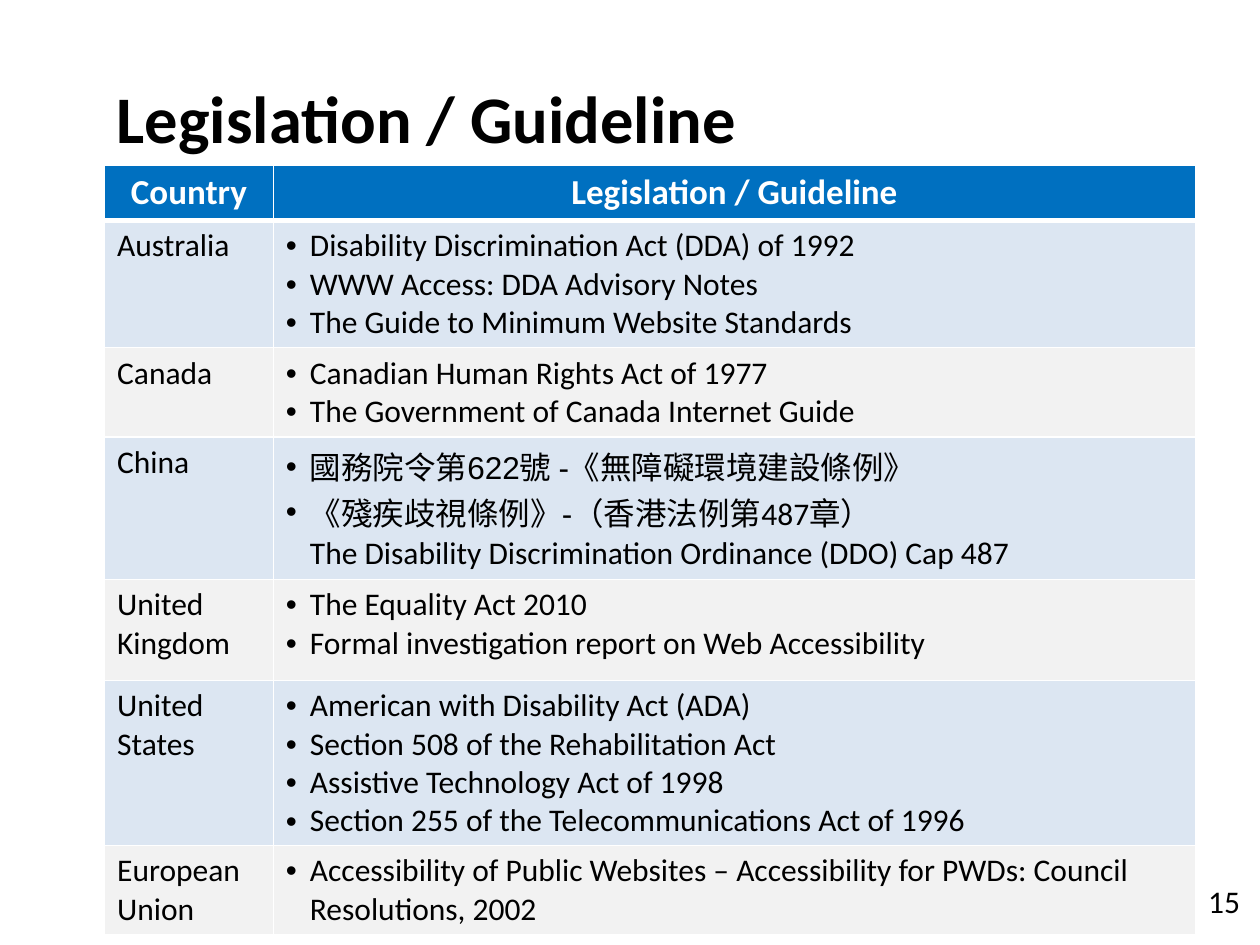
from dataclasses import dataclass
from lxml import etree
from pptx import Presentation, util as u
from pptx.dml.color import RGBColor
from pptx.enum import text
from pptx.oxml.ns import qn


@dataclass(frozen=True)
class Theme:
    font: str = "Calibri"
    alt: str = "Arial"
    ink: str = "000000"
    paper: str = "FFFFFF"
    head: str = "0070C0"
    bands: tuple = ("DCE6F2", "F2F2F2")
    title: int = 38
    label: int = 20
    body: int = 18
    thin: int = 1
    thick: int = 3
    hang: float = 0.19


T = Theme()
WIDE, HIGH = 10, 7.5
LEFT, SPAN = 0.83, 8.66
COLS = (1.34, 7.32)
HEAD = 0.44


# Each line is a list of (words, font) runs, with True for a bulleted line
def line(words, font=T.font, dot=True):
    return [(words, font)], dot


ROWS = [
    ("Australia", 1.01, [
        line("Disability Discrimination Act (DDA) of 1992"),
        line("WWW Access: DDA Advisory Notes"),
        line("The Guide to Minimum Website Standards")]),
    ("Canada", 0.71, [
        line("Canadian Human Rights Act of 1977"),
        line("The Government of Canada Internet Guide")]),
    ("China", 1.13, [
        line("國務院令第622號 -《無障礙環境建設條例》", T.alt),
        ([("《殘疾歧視條例》", T.font), ("-", T.alt),
          ("（香港法例第487章）", T.font)], True),
        line("The Disability Discrimination Ordinance (DDO) Cap 487", dot=False)]),
    ("United Kingdom", 0.8, [
        line("The Equality Act 2010"),
        line("Formal investigation report on Web Accessibility")]),
    ("United States", 1.31, [
        line("American with Disability Act (ADA)"),
        line("Section 508 of the Rehabilitation Act"),
        line("Assistive Technology Act of 1998"),
        line("Section 255 of the Telecommunications Act of 1996")]),
    ("European Union", 0.71, [
        line("Accessibility of Public Websites – Accessibility for PWDs: "
             "Council Resolutions, 2002")]),
]


def write(para, words, size, color=T.ink, bold=False, font=T.font):
    run = para.add_run()
    run.text = words
    form = {"name": font, "size": u.Pt(size), "bold": bold}
    for key, val in form.items():
        setattr(run.font, key, val)
    run.font.color.rgb = RGBColor.from_string(color)


def note(slide, box, words, size, bold=False, anchor=text.MSO_ANCHOR.TOP):
    frame = slide.shapes.add_textbox(*map(u.Inches, box)).text_frame
    frame.word_wrap = True
    frame.vertical_anchor = anchor
    write(frame.paragraphs[0], words, size, bold=bold)


def indent(para, dot):
    props = para._p.get_or_add_pPr()
    hang = u.Inches(T.hang)
    props.set("marL", str(hang))
    props.set("indent", str(-hang if dot else 0))
    if dot:
        etree.SubElement(props, qn("a:buFont"), typeface=T.alt)
        etree.SubElement(props, qn("a:buChar"), char="•")


def paint(cell, color, top=T.thin, base=T.thin):
    props = cell._tc.get_or_add_tcPr()
    edges = {"lnL": T.thin, "lnR": T.thin, "lnT": top, "lnB": base}
    for name, width in edges.items():
        edge = etree.SubElement(props, qn("a:" + name), w=str(u.Pt(width)))
        fill = etree.SubElement(edge, qn("a:solidFill"))
        etree.SubElement(fill, qn("a:srgbClr"), val=T.paper)
    cell.fill.solid()
    cell.fill.fore_color.rgb = RGBColor.from_string(color)


def fill_list(frame, lines):
    for i, (runs, dot) in enumerate(lines):
        para = frame.add_paragraph() if i else frame.paragraphs[0]
        indent(para, dot)
        for words, font in runs:
            write(para, words, T.body, font=font)


def laws(slide, box):
    table = slide.shapes.add_table(
        len(ROWS) + 1, len(COLS), *map(u.Inches, box)).table
    for col, width in zip(table.columns, COLS):
        col.width = u.Inches(width)

    # Header row
    table.rows[0].height = u.Inches(HEAD)
    for cell, words in zip(table.rows[0].cells, ("Country", "Legislation / Guideline")):
        para = cell.text_frame.paragraphs[0]
        para.alignment = text.PP_ALIGN.CENTER
        write(para, words, T.label, T.paper, True)
        paint(cell, T.head, base=T.thick)

    # Country rows in alternating bands
    for i, (land, height, lines) in enumerate(ROWS):
        row = table.rows[i + 1]
        row.height = u.Inches(height)
        name, acts = row.cells
        write(name.text_frame.paragraphs[0], land, T.body)
        fill_list(acts.text_frame, lines)
        for cell in (name, acts):
            paint(cell, T.bands[i % 2], top=T.thin if i else T.thick)


def main():
    deck = Presentation()
    deck.slide_width, deck.slide_height = u.Inches(WIDE), u.Inches(HIGH)
    slide = deck.slides.add_slide(deck.slide_layouts[6])
    # Title, table and page number
    note(slide, (LEFT, 0.3, SPAN, 1.25), "Legislation / Guideline",
         T.title, True, text.MSO_ANCHOR.MIDDLE)
    laws(slide, (LEFT, 1.31, SPAN, HEAD + sum(row[1] for row in ROWS)))
    note(slide, (LEFT + SPAN, 6.95, 0.56, 0.4), "15", T.body)
    deck.save("out.pptx")


if __name__ == "__main__":
    main()
